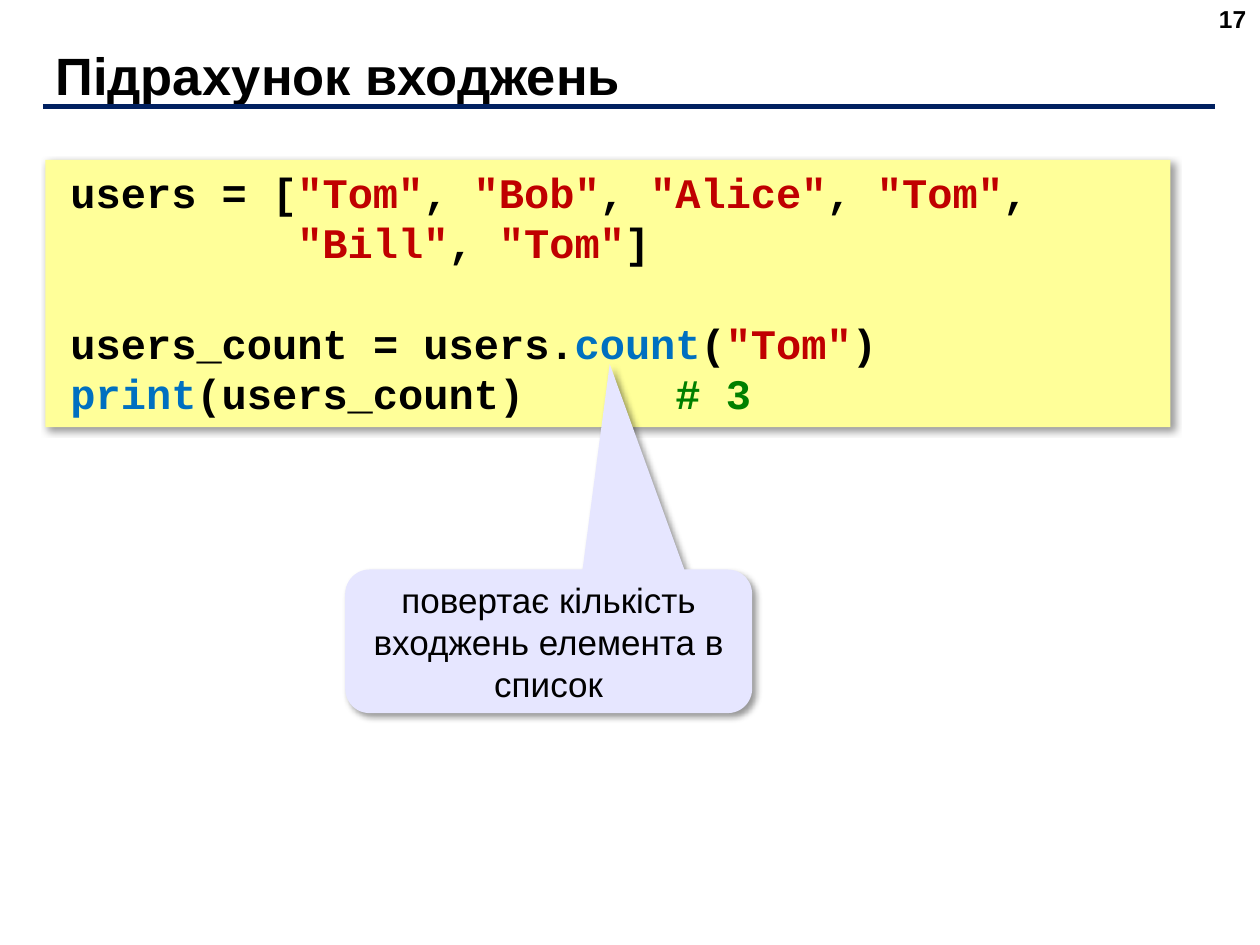
from dataclasses import dataclass

from lxml import etree
from pptx import Presentation, util as u
from pptx.dml.color import RGBColor
from pptx.enum import shapes, text
from pptx.oxml import ns

TITLE = "Підрахунок входжень"
PAGE_NUMBER = "17"
NOTE = "повертає кількість входжень елемента в список"

# Each code line: indent in characters, blank lines above, coloured pieces.
# A piece may end with the number of characters its single space is widened by.
CODE = [
    (0, 0, [("users = [", "ink"), ('"Tom"', "string"), (", ", "ink"),
            ('"Bob"', "string"), (", ", "ink"), ('"Alice"', "string"),
            (", ", "ink"), ('"Tom"', "string"), (",", "ink")]),
    (9, 0, [('"Bill"', "string"), (", ", "ink"), ('"Tom"', "string"),
            ("]", "ink")]),
    (0, 1, [("users_count = users.", "ink"), ("count", "call"),
            ("(", "ink"), ('"Tom"', "string"), (")", "ink")]),
    (0, 0, [("print", "call"), ("(users_count)", "ink"), (" ", "ink", 5),
            ("# 3", "comment")]),
]

# Left, top, width, height in percent of the slide.
AREAS = {
    "title": (3.4, 4.4, 91.6, 6.93),
    "number": (76.6, -0.27, 23.3, 6.93),
    "rule": (3.4, 11.3, 93, 0),
    "code": (3.6, 16.93, 89.3, 28.27),
    "note": (27.4, 60.27, 32.3, 15.2),
}


@dataclass(frozen=True)
class Theme:
    ink: str = "000000"
    string: str = "C00000"
    call: str = "0070C0"
    comment: str = "008000"
    rule: str = "002060"
    code_fill: str = "FFFF99"
    note_fill: str = "E6E6FF"
    font: str = "Arial"
    code_font: str = "Courier New"
    title_size: int = 30
    code_size: int = 24
    note_size: int = 20
    number_size: int = 14
    code_pitch: float = 28.8


THEME = Theme()
CHARACTER = u.Pt(THEME.code_size * 0.6)

presentation = Presentation()
presentation.slide_width, presentation.slide_height = u.Inches(10), u.Inches(7.5)
slide = presentation.slides.add_slide(presentation.slide_layouts[5])


def area(name):
    sides = (presentation.slide_width, presentation.slide_height) * 2
    return [round(share * side / 100) for share, side in zip(AREAS[name], sides)]


def write(paragraph, words, size, font=THEME.font, colour=THEME.ink,
          bold=False, align=text.PP_ALIGN.LEFT, tracking=0):
    """Add a formatted run; tracking is extra character spacing in points."""
    paragraph.alignment = align
    run = paragraph.add_run()
    run.text = words
    run.font.name, run.font.size, run.font.bold = font, u.Pt(size), bold
    run.font.color.rgb = RGBColor.from_string(colour)
    if tracking:
        run._r.get_or_add_rPr().set("spc", str(round(tracking * 100)))


def add_panel(kind, name, fill):
    """Add a borderless filled shape with a soft lower-right shadow."""
    shape = slide.shapes.add_shape(kind, *area(name))
    shape.fill.solid()
    shape.fill.fore_color.rgb = RGBColor.from_string(fill)
    shape.line.fill.background()
    shape.shadow.inherit = False
    effects = shape._element.spPr.find(ns.qn("a:effectLst"))
    shadow = etree.SubElement(effects, ns.qn("a:outerShdw"), blurRad=str(u.Pt(4)),
                              dist=str(u.Pt(3)), dir=str(45 * 60000),
                              algn="tl", rotWithShape="0")
    colour = etree.SubElement(shadow, ns.qn("a:srgbClr"), val=THEME.ink)
    etree.SubElement(colour, ns.qn("a:alpha"), val="40000")
    shape.text_frame.word_wrap = True
    return shape


def add_heading():
    title = slide.shapes.title
    title.left, title.top, title.width, title.height = area("title")
    title.text_frame.vertical_anchor = text.MSO_ANCHOR.MIDDLE
    write(title.text_frame.paragraphs[0], TITLE, THEME.title_size, bold=True)

    number = slide.shapes.add_textbox(*area("number")).text_frame
    number.word_wrap = True
    write(number.paragraphs[0], PAGE_NUMBER, THEME.number_size, bold=True,
          align=text.PP_ALIGN.RIGHT)


def add_code():
    frame = add_panel(shapes.MSO_SHAPE.RECTANGLE, "code", THEME.code_fill).text_frame
    frame.vertical_anchor = text.MSO_ANCHOR.TOP
    frame.margin_left, frame.margin_top = u.Inches(0.2), u.Inches(0.05)
    for index, (indent, blank_lines, pieces) in enumerate(CODE):
        paragraph = frame.add_paragraph() if index else frame.paragraphs[0]
        paragraph.line_spacing = u.Pt(THEME.code_pitch)
        paragraph.space_before = u.Pt(THEME.code_pitch * blank_lines)
        properties = paragraph._p.get_or_add_pPr()
        properties.set("marL", str(indent * CHARACTER))
        properties.set("indent", "0")
        for words, role, *widening in pieces:
            write(paragraph, words, THEME.code_size, font=THEME.code_font,
                  colour=getattr(THEME, role), bold=True,
                  tracking=sum(widening) * CHARACTER.pt)


def add_rule():
    left, top, width, height = area("rule")
    rule = slide.shapes.add_connector(shapes.MSO_CONNECTOR.STRAIGHT, left, top,
                                      left + width, top + height)
    rule.line.color.rgb = RGBColor.from_string(THEME.rule)
    rule.line.width = u.Pt(3)
    etree.SubElement(rule._element.spPr, ns.qn("a:effectLst"))


def add_note():
    note = add_panel(shapes.MSO_SHAPE.ROUNDED_RECTANGULAR_CALLOUT, "note",
                     THEME.note_fill)
    for index, value in enumerate((0.15, -1.93, 0.17)):
        note.adjustments[index] = value
    note.text_frame.vertical_anchor = text.MSO_ANCHOR.MIDDLE
    write(note.text_frame.paragraphs[0], NOTE, THEME.note_size,
          align=text.PP_ALIGN.CENTER)


add_heading()
add_code()
add_rule()
add_note()
presentation.save("out.pptx")
